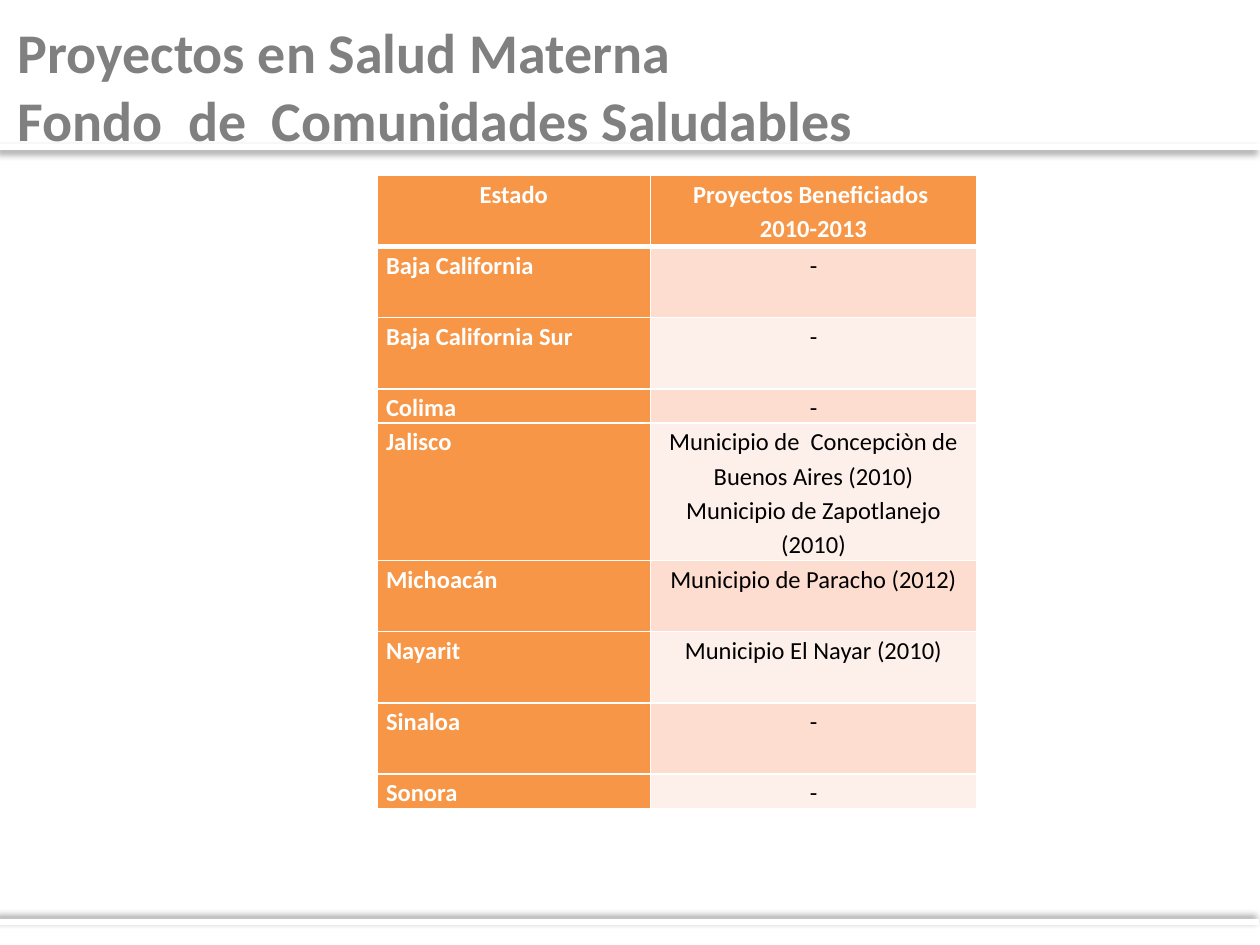
import pptx
import pptx.util
import pptx.dml.color
import pptx.enum.shapes
import pptx.enum.text
import pptx.oxml
import pptx.oxml.ns

Pt = pptx.util.Pt
ALIGN = pptx.enum.text.PP_ALIGN
ANCHOR = pptx.enum.text.MSO_ANCHOR
NS = pptx.oxml.ns.nsdecls("a")
HUES = {"white": "FFFFFF", "black": "000000", "gray": "808080",
        "orange": "F79646", "peach": "FCDDCF", "pale": "FDEFE9"}
HEADS = ["Estado", "Proyectos Beneficiados \n2010-2013"]
STATES = [
    ("Baja California", "-", 40.7),
    ("Baja California Sur", "-", 40.7),
    ("Colima", "-", 19.6),
    ("Jalisco", "Municipio de  Concepciòn de Buenos Aires (2010)\n"
                "Municipio de Zapotlanejo (2010)", 78.5),
    ("Michoacán", "Municipio de Paracho (2012)", 40.7),
    ("Nayarit", "Municipio El Nayar (2010)", 40.7),
    ("Sinaloa", "-", 40.7),
    ("Sonora", "-", 19.6),
]


def rgb(name):
    """Return the named colour."""
    return pptx.dml.color.RGBColor.from_string(HUES[name])


def write(frame, text, size=14, hue="white", bold=True, align=ALIGN.LEFT, space=None):
    """Fill a text frame with formatted paragraphs."""
    frame.word_wrap = True
    frame.text = text
    for para in frame.paragraphs:
        para.alignment = align
        para.line_spacing = space
        for run in para.runs:
            run.font.name = "Calibri"
            run.font.size = Pt(size)
            run.font.bold = bold
            run.font.color.rgb = rgb(hue)


def edge(cell, **widths):
    """Draw white borders of the given widths, in points."""
    props = cell._tc.get_or_add_tcPr()
    for side in "LRTB":
        width = int(Pt(widths.get(side, 1)))
        props.append(pptx.oxml.parse_xml(
            f'<a:ln{side} {NS} w="{width}"><a:solidFill>'
            f'<a:srgbClr val="{HUES["white"]}"/></a:solidFill></a:ln{side}>'))


def add_bar(slide, left, top, width, height, turn, angle):
    """Place a white band that casts a soft shadow."""
    bar = slide.shapes.add_shape(pptx.enum.shapes.MSO_SHAPE.RECTANGLE,
                                 Pt(left), Pt(top), Pt(width), Pt(height))
    bar.rotation = turn
    bar.fill.solid()
    bar.fill.fore_color.rgb = rgb("white")
    bar.line.fill.background()
    bar.shadow.inherit = False
    glow = bar._element.spPr.find(pptx.oxml.ns.qn("a:effectLst"))
    glow.append(pptx.oxml.parse_xml(
        f'<a:outerShdw {NS} blurRad="{int(Pt(4))}" dist="{int(Pt(3))}" '
        f'dir="{angle * 60000}" algn="tr" rotWithShape="0">'
        f'<a:srgbClr val="{HUES["black"]}"><a:alpha val="40000"/></a:srgbClr>'
        '</a:outerShdw>'))


def add_title(slide, left, top, width, height):
    """Place the two-line heading."""
    box = slide.shapes.add_textbox(Pt(left), Pt(top), Pt(width), Pt(height))
    box.text_frame.vertical_anchor = ANCHOR.MIDDLE
    write(box.text_frame, "Proyectos en Salud Materna\vFondo  de  Comunidades Saludables",
          size=32, hue="gray")


def add_cell(cell, text, fill, **style):
    """Fill one table cell with text and colour."""
    cell.margin_left = cell.margin_right = Pt(5)
    cell.margin_top = cell.margin_bottom = 0
    write(cell.text_frame, text, space=1.15, **style)
    cell.fill.solid()
    cell.fill.fore_color.rgb = rgb(fill)


def add_grid(slide, left, top, width, height):
    """Place the table of states and their projects."""
    grid = slide.shapes.add_table(len(STATES) + 1, 2, Pt(left), Pt(top),
                                  Pt(width), Pt(height)).table
    grid.horz_banding = False
    grid.columns[0].width = Pt(156)
    grid.columns[1].width = Pt(width - 156)
    grid.rows[0].height = Pt(40.7)
    for col, head in enumerate(HEADS):
        edge(grid.cell(0, col), B=3)
        add_cell(grid.cell(0, col), head, "orange", align=ALIGN.CENTER)
    for row, (state, works, tall) in enumerate(STATES, 1):
        grid.rows[row].height = Pt(tall)
        for col in range(2):
            edge(grid.cell(row, col), T=3 if row == 1 else 1)
        add_cell(grid.cell(row, 0), state, "orange")
        add_cell(grid.cell(row, 1), works, "peach" if row % 2 else "pale",
                 hue="black", bold=False, align=ALIGN.CENTER)


def main():
    """Build the slide and save it."""
    deck = pptx.Presentation()
    deck.slide_width, deck.slide_height = Pt(720), Pt(540)
    slide = deck.slides.add_slide(deck.slide_layouts[6])
    add_bar(slide, 0, 82, 720, 3.6, 0, 135)
    add_bar(slide, -0.7, 525, 720, 3.6, 180, 225)
    add_title(slide, 3, 3.6, 516, 90)
    add_grid(slide, 215.6, 100.2, 342.6, 362)
    deck.save("out.pptx")


if __name__ == "__main__":
    main()
